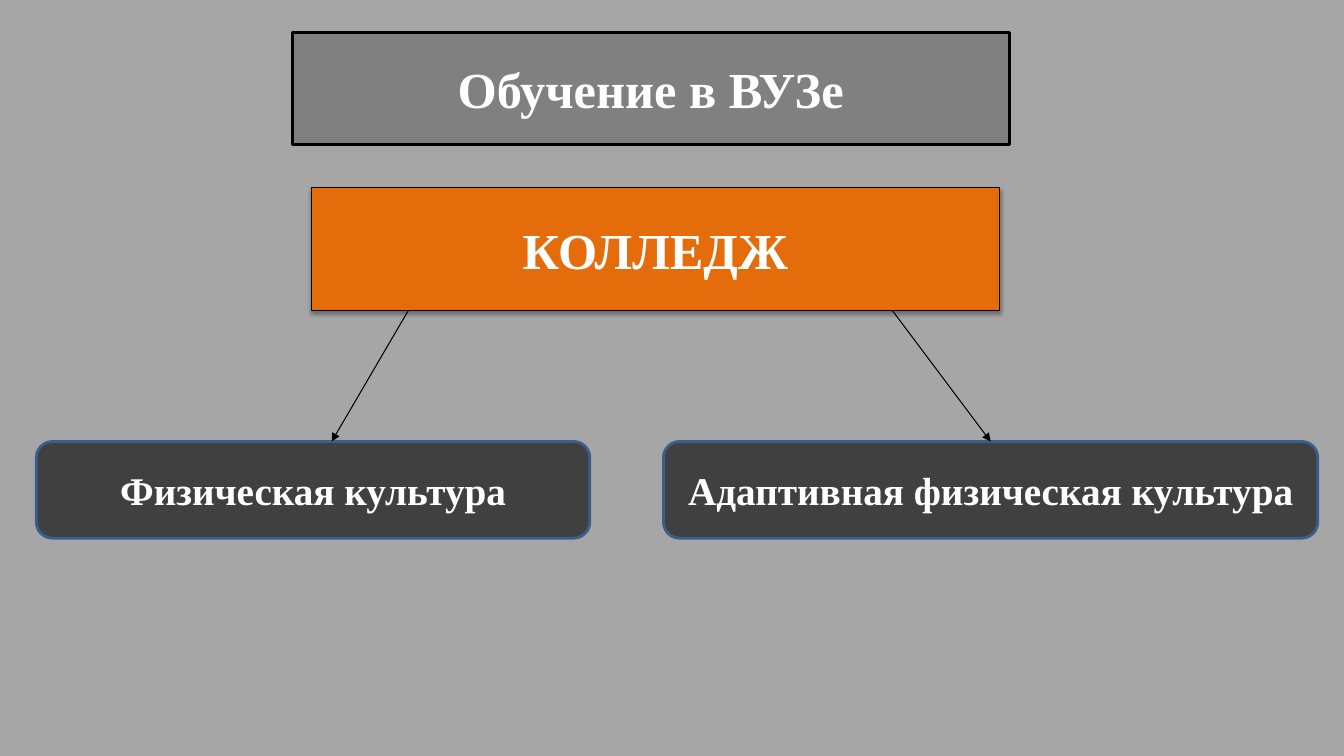
from lxml.etree import SubElement
from pptx import Presentation
from pptx.dml.color import RGBColor
from pptx.enum.shapes import MSO_CONNECTOR, MSO_SHAPE
from pptx.enum.text import MSO_ANCHOR, MSO_AUTO_SIZE, PP_ALIGN
from pptx.oxml import parse_xml
from pptx.oxml.ns import nsdecls, qn
from pptx.util import Inches, Pt

BACKGROUND = RGBColor(0xA6, 0xA6, 0xA6)
GREY = RGBColor(0x80, 0x80, 0x80)
ORANGE = RGBColor(0xE4, 0x6C, 0x0A)
DARK = RGBColor(0x40, 0x40, 0x40)
BLUE = RGBColor(0x3A, 0x5F, 0x8C)
BLACK = RGBColor(0, 0, 0)
WHITE = RGBColor(0xFF, 0xFF, 0xFF)

FRAME_FORMAT = {
    "word_wrap": True,
    "auto_size": MSO_AUTO_SIZE.NONE,
    "vertical_anchor": MSO_ANCHOR.MIDDLE,
}
FONT_FORMAT = {"name": "Times New Roman", "bold": True}


def apply_format(target, values):
    for attribute, value in values.items():
        setattr(target, attribute, value)


def style_box(box, text, size, fill, border, border_width):
    box.fill.solid()
    box.fill.fore_color.rgb = fill
    box.line.color.rgb = border
    box.line.width = Pt(border_width)
    box.shadow.inherit = False
    frame = box.text_frame
    apply_format(frame, FRAME_FORMAT)
    frame.text = text
    paragraph = frame.paragraphs[0]
    paragraph.alignment = PP_ALIGN.CENTER
    font = paragraph.runs[0].font
    apply_format(font, FONT_FORMAT | {"size": Pt(size)})
    font.color.rgb = WHITE


def add_box(slide, kind, bounds, *style):
    box = slide.shapes.add_shape(kind, *map(Inches, bounds))
    style_box(box, *style)
    return box


def place_title(slide, bounds, *style):
    title = slide.shapes.title
    sides = ("left", "top", "width", "height")
    apply_format(title, dict(zip(sides, map(Inches, bounds))))
    # Rounded outline goes right after the position
    title._element.spPr.insert(1, parse_xml(
        f'<a:prstGeom {nsdecls("a")} prst="roundRect"><a:avLst/></a:prstGeom>'))
    style_box(title, *style)


def add_soft_shadow(box):
    effects = box._element.spPr.find(qn("a:effectLst"))
    effects.append(parse_xml(
        f'<a:outerShdw {nsdecls("a")} blurRad="{Pt(3.1)}" dist="{Pt(1.8)}" '
        'dir="5400000" rotWithShape="0"><a:srgbClr val="000000">'
        '<a:alpha val="35000"/></a:srgbClr></a:outerShdw>'))


def add_arrow(slide, start, end):
    arrow = slide.shapes.add_connector(
        MSO_CONNECTOR.STRAIGHT, *map(Inches, start + end))
    arrow.line.color.rgb = BLACK
    arrow.line.width = Pt(0.75)
    properties = arrow._element.spPr
    SubElement(properties.find(qn("a:ln")), qn("a:tailEnd"), type="triangle")
    SubElement(properties, qn("a:effectLst"))
    return arrow


def main():
    deck = Presentation()
    deck.slide_width, deck.slide_height = Inches(13.33), Inches(7.5)
    slide = deck.slides.add_slide(deck.slide_layouts[5])
    slide.background.fill.solid()
    slide.background.fill.fore_color.rgb = BACKGROUND

    # Title and college
    place_title(slide, (2.9, 0.32, 7.11, 1.11),
                "Обучение в ВУЗе", 36, GREY, BLACK, 2)
    college = add_box(slide, MSO_SHAPE.RECTANGLE, (3.09, 1.86, 6.82, 1.22),
                      "КОЛЛЕДЖ", 36, ORANGE, BLACK, 0.75)
    add_soft_shadow(college)

    # Fields of study
    field_style = (28, DARK, BLUE, 2)
    add_box(slide, MSO_SHAPE.ROUNDED_RECTANGLE, (0.36, 4.38, 5.49, 0.96),
            "Физическая культура", *field_style)
    adaptive = add_box(slide, MSO_SHAPE.ROUNDED_RECTANGLE,
                       (6.58, 4.38, 6.49, 0.96),
                       "Адаптивная физическая культура", *field_style)

    # Arrows from the college to the fields
    adaptive_arrow = add_arrow(slide, (8.85, 3.08), (9.82, 4.38))
    adaptive_arrow.end_connect(adaptive, 0)
    add_arrow(slide, (4.05, 3.08), (3.29, 4.38))

    deck.save("out.pptx")


if __name__ == "__main__":
    main()
